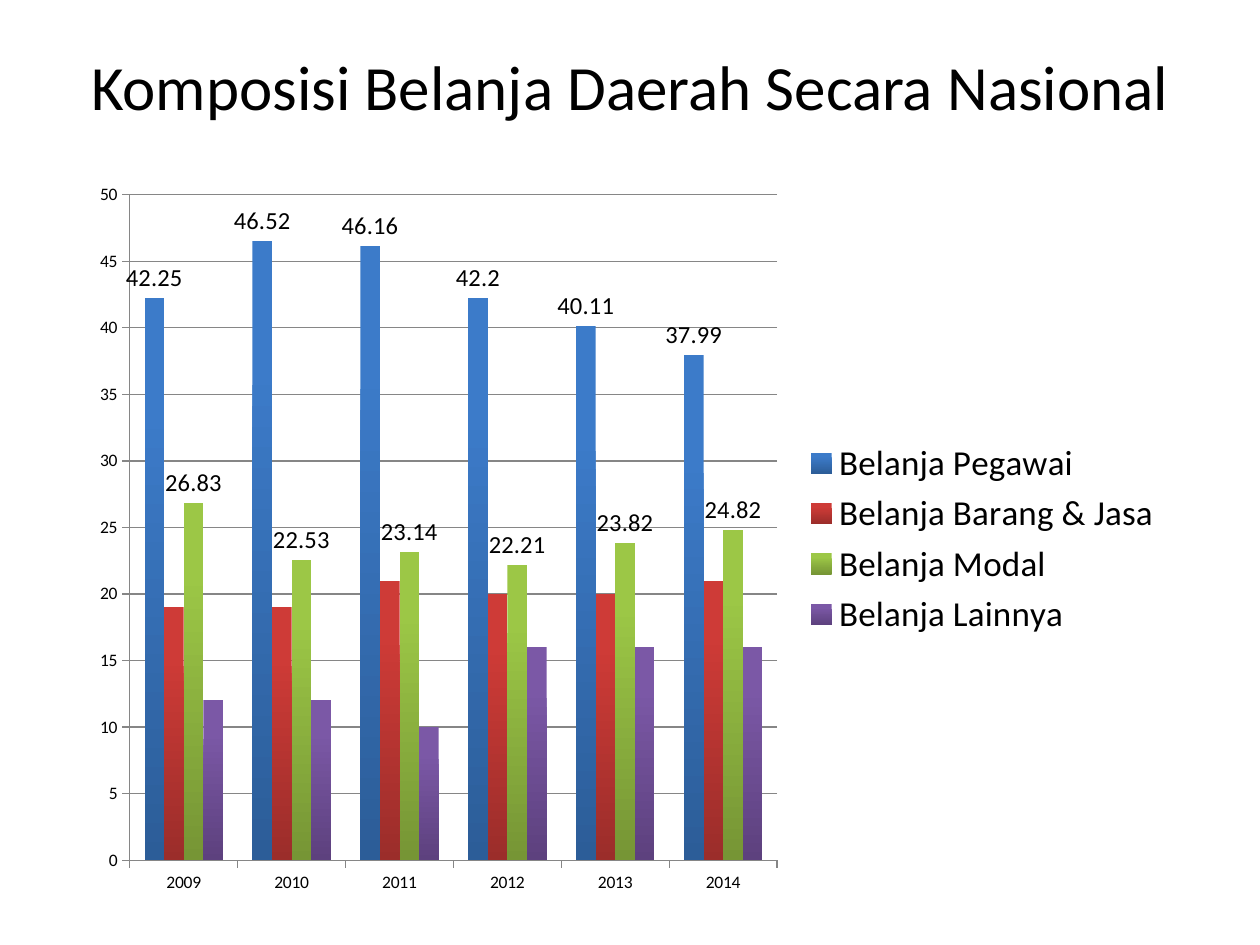
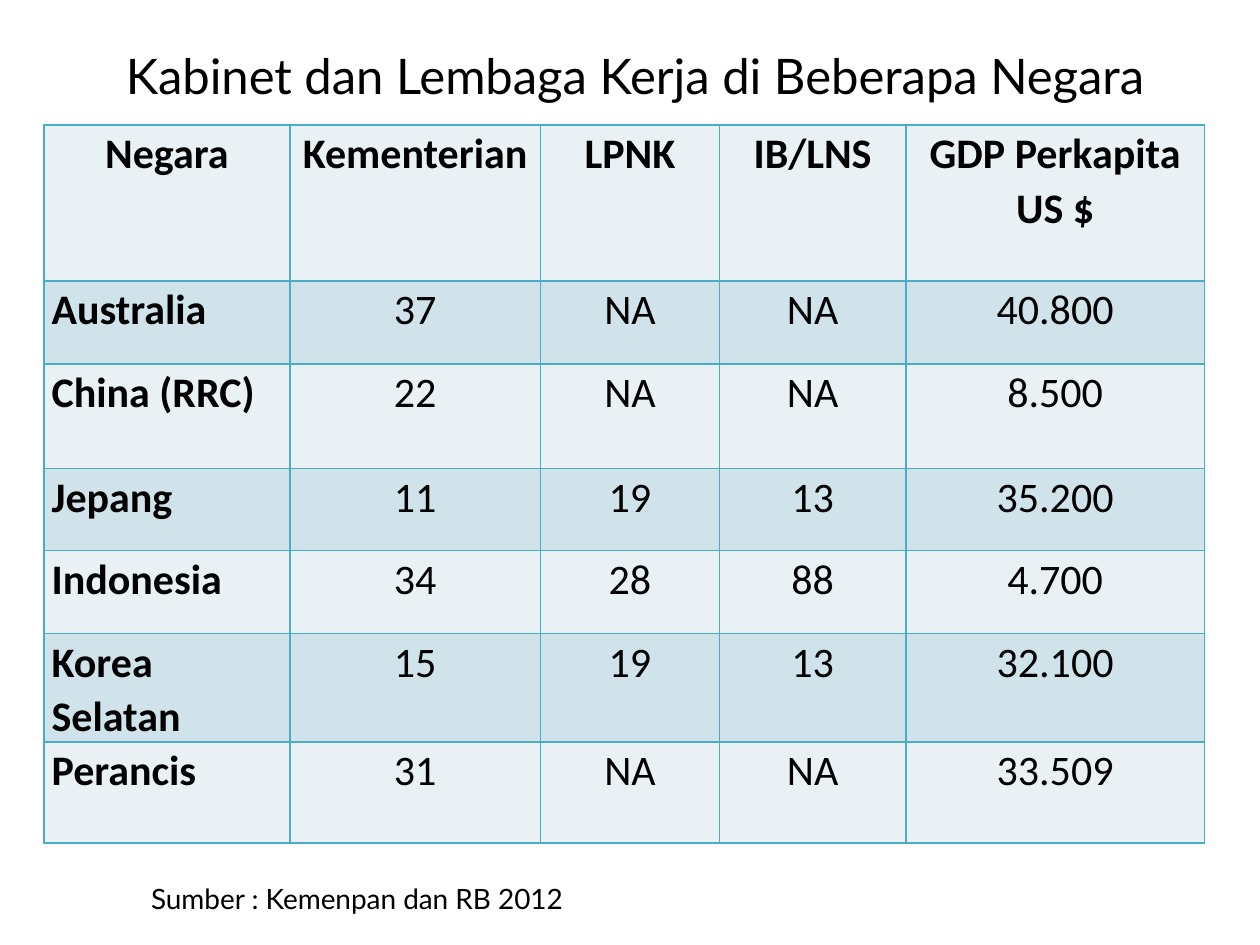
import pptx
import pptx.chart.data
import pptx.dml.color
import pptx.enum.chart
import pptx.enum.text
import pptx.oxml
import pptx.oxml.ns
import pptx.util

SLIDE_WIDTH, SLIDE_HEIGHT = 10, 7.5
COLORS = {
    "text": "000000",
    "axis": "868686",
    "border": "4BACC6",
    "light band": "E9F1F5",
    "dark band": "D0E3EA",
}
ALIGN = pptx.enum.text.PP_ALIGN

YEARS = ["2009", "2010", "2011", "2012", "2013", "2014"]
# name, values, top and bottom colour of the bars, values shown above the bars
SPENDING = [
    ("Belanja Pegawai", [42.25, 46.52, 46.16, 42.2, 40.11, 37.99], "3C7BC9", "2C5D98", True),
    ("Belanja Barang & Jasa", [19, 19, 21, 20, 20, 21], "CE3B37", "9B2D2A", False),
    ("Belanja Modal", [26.83, 22.53, 23.14, 22.21, 23.82, 24.82], "9CC746", "769535", True),
    ("Belanja Lainnya", [12, 12, 10, 16, 16, 16], "7B58A6", "5D417E", False),
]

COLUMN_WIDTHS = [1.95, 1.99, 1.42, 1.48, 2.37]
ROW_HEIGHTS = [1.24, 0.66, 0.83, 0.65, 0.66, 0.86, 0.8]
CABINETS = [
    ["Negara", "Kementerian", "LPNK", "IB/LNS", "GDP Perkapita US $"],
    ["Australia", "37", "NA", "NA", "40.800"],
    ["China (RRC)", "22", "NA", "NA", "8.500"],
    ["Jepang", "11", "19", "13", "35.200"],
    ["Indonesia", "34", "28", "88", "4.700"],
    ["Korea Selatan", "15", "19", "13", "32.100"],
    ["Perancis", "31", "NA", "NA", "33.509"],
]


def rgb(name):
    return pptx.dml.color.RGBColor.from_string(COLORS.get(name, name))


def inches(*lengths):
    return [pptx.util.Inches(length) for length in lengths]


def share(left, top, width, height):
    """Turn shares of the slide's size into lengths."""
    return inches(left * SLIDE_WIDTH, top * SLIDE_HEIGHT,
                  width * SLIDE_WIDTH, height * SLIDE_HEIGHT)


def set_all(target, formats):
    for attribute, value in formats.items():
        setattr(target, attribute, value)


def style_font(font, size, name="Calibri", bold=False):
    set_all(font, {"size": pptx.util.Pt(size), "name": name, "bold": bold})
    font.color.rgb = rgb("text")


def add_line_of_text(slide, place, text, size, font_name, spacing=0.9):
    frame = slide.shapes.add_textbox(*place).text_frame
    set_all(frame, {"word_wrap": True, "vertical_anchor": pptx.enum.text.MSO_ANCHOR.MIDDLE})
    paragraph = frame.paragraphs[0]
    set_all(paragraph, {"text": text, "alignment": ALIGN.CENTER, "line_spacing": spacing})
    style_font(paragraph.runs[0].font, size, font_name)


def style_bars(series, top_color, bottom_color, labelled):
    fill = series.format.fill
    fill.gradient()
    fill.gradient_angle = 270
    for stop, position, color in zip(fill.gradient_stops, (0.2, 1), (top_color, bottom_color)):
        stop.position = position
        stop.color.rgb = rgb(color)
    if labelled:
        labels = series.data_labels
        set_all(labels, {"show_value": True,
                         "position": pptx.enum.chart.XL_LABEL_POSITION.OUTSIDE_END})
        style_font(labels.font, 14)


def style_axis(axis):
    axis.major_tick_mark = pptx.enum.chart.XL_TICK_MARK.OUTSIDE
    axis.format.line.color.rgb = rgb("axis")
    style_font(axis.tick_labels.font, 10)


def add_spending_chart(slide, place):
    data = pptx.chart.data.CategoryChartData()
    data.categories = YEARS
    for name, values, *_ in SPENDING:
        data.add_series(name, values)
    chart = slide.shapes.add_chart(
        pptx.enum.chart.XL_CHART_TYPE.COLUMN_CLUSTERED, *place, data).chart
    style_font(chart.font, 10)
    set_all(chart, {"has_title": False, "has_legend": True})
    set_all(chart.legend, {"position": pptx.enum.chart.XL_LEGEND_POSITION.RIGHT,
                           "include_in_layout": False})
    style_font(chart.legend.font, 20)

    style_axis(chart.category_axis)
    percent_axis = chart.value_axis
    style_axis(percent_axis)
    set_all(percent_axis, {"minimum_scale": 0, "maximum_scale": 50, "major_unit": 5,
                           "has_major_gridlines": True})
    percent_axis.major_gridlines.format.line.color.rgb = rgb("axis")

    bars = chart.plots[0]
    set_all(bars, {"gap_width": 150, "overlap": 0, "vary_by_categories": False})
    for series, (_, _, *bar_style) in zip(bars.series, SPENDING):
        style_bars(series, *bar_style)


def add_borders(cell):
    properties = cell._tc.get_or_add_tcPr()
    for index, side in enumerate(("lnL", "lnR", "lnT", "lnB")):
        properties.insert(index, pptx.oxml.parse_xml(
            f'<a:{side} {pptx.oxml.ns.nsdecls("a")} w="12700"><a:solidFill>'
            f'<a:srgbClr val="{COLORS["border"]}"/></a:solidFill></a:{side}>'))


def fill_cell(cell, text, row, column):
    margin = pptx.util.Inches(0.06)
    set_all(cell, {"margin_left": margin, "margin_right": margin,
                   "margin_top": 0, "margin_bottom": 0})
    cell.fill.solid()
    cell.fill.fore_color.rgb = rgb("dark band" if row % 2 else "light band")
    is_country = row > 0 and column == 0
    paragraph = cell.text_frame.paragraphs[0]
    set_all(paragraph, {"text": text, "line_spacing": 1.07,
                        "alignment": ALIGN.LEFT if is_country else ALIGN.CENTER})
    style_font(paragraph.runs[0].font, 24, bold=row == 0 or column == 0)
    add_borders(cell)


def add_cabinet_table(slide, left, top):
    place = inches(left, top, sum(COLUMN_WIDTHS), sum(ROW_HEIGHTS))
    table = slide.shapes.add_table(len(ROW_HEIGHTS), len(COLUMN_WIDTHS), *place).table
    for column, width in zip(table.columns, inches(*COLUMN_WIDTHS)):
        column.width = width
    for row, height in zip(table.rows, inches(*ROW_HEIGHTS)):
        row.height = height
    for row, country in enumerate(CABINETS):
        for column, text in enumerate(country):
            fill_cell(table.cell(row, column), text, row, column)


def main():
    deck = pptx.Presentation()
    set_all(deck, dict(zip(("slide_width", "slide_height"), inches(SLIDE_WIDTH, SLIDE_HEIGHT))))
    blank = deck.slide_layouts[6]

    spending = deck.slides.add_slide(blank)
    add_line_of_text(spending, share(0.05, 0.04, 0.9, 0.1),
                     "Komposisi Belanja Daerah Secara Nasional", 36, "Calibri", 1.0)
    add_spending_chart(spending, share(0.062, 0.18, 0.871, 0.78))

    cabinets = deck.slides.add_slide(blank)
    add_cabinet_table(cabinets, 0.35, 0.99)
    add_line_of_text(cabinets, inches(0.51, -0.04, 9.06, 1.32),
                     "Kabinet dan Lembaga Kerja di Beberapa Negara", 28, "Lato")
    add_line_of_text(cabinets, inches(0.51, 6.79, 4.65, 0.71),
                     "Sumber : Kemenpan dan RB 2012", 16, "Lato")

    deck.save("out.pptx")


if __name__ == "__main__":
    main()
